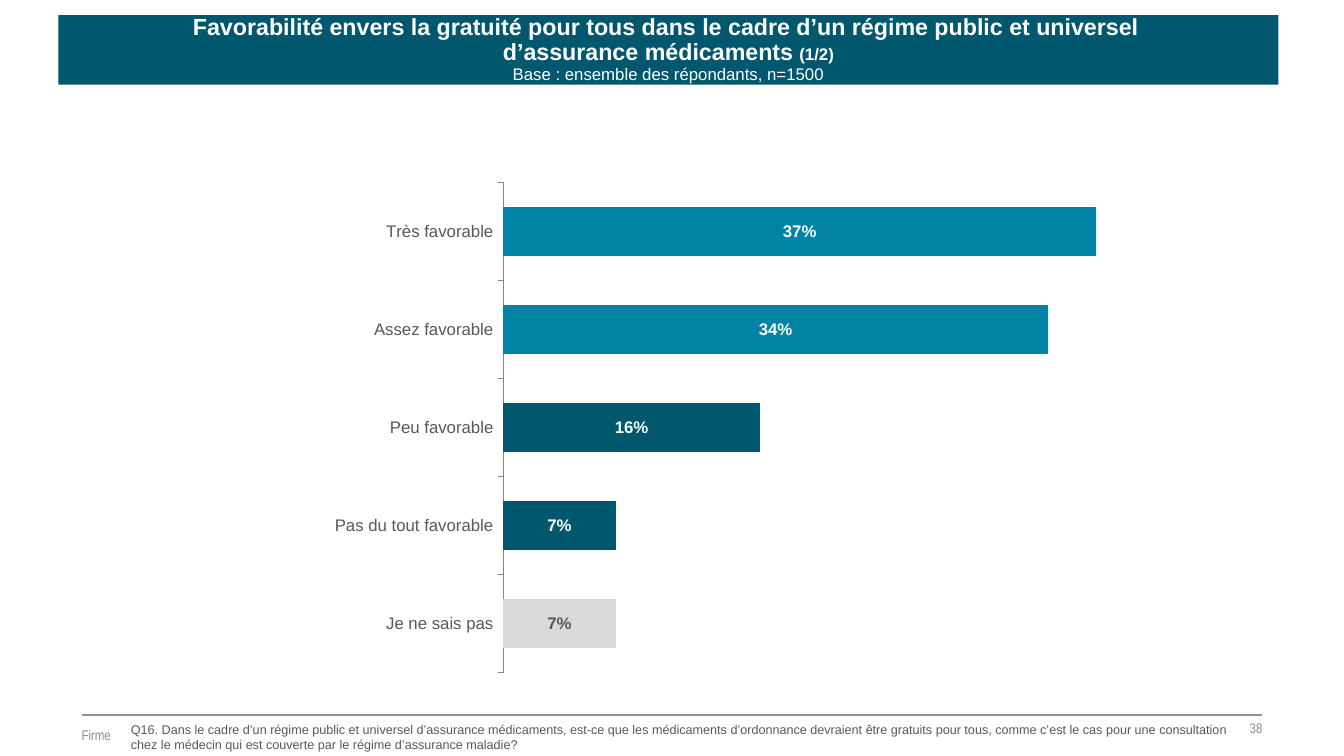
from lxml import etree
from pptx import Presentation
from pptx.chart.data import CategoryChartData
from pptx.dml.color import RGBColor
from pptx.enum.chart import XL_CHART_TYPE, XL_LABEL_POSITION, XL_TICK_LABEL_POSITION, XL_TICK_MARK
from pptx.enum.shapes import MSO_CONNECTOR, MSO_SHAPE
from pptx.enum.text import MSO_ANCHOR, PP_ALIGN
from pptx.oxml import parse_xml
from pptx.oxml.ns import nsdecls, qn
from pptx.util import Inches, Pt

COLORS = {
    "dark_teal": "00576E",
    "teal": "0083A5",
    "light_gray": "D9D9D9",
    "text_gray": "595959",
    "footer_gray": "8C8C8C",
    "axis_gray": "868686",
    "rule": "88959E",
    "white": "FFFFFF",
}

ANSWERS = [
    ("Très favorable", 0.37, "teal"),
    ("Assez favorable", 0.34, "teal"),
    ("Peu favorable", 0.16, "dark_teal"),
    ("Pas du tout favorable", 0.07, "dark_teal"),
    ("Je ne sais pas", 0.07, "light_gray"),
]

QUESTION = (
    "Q16. Dans le cadre d’un régime public et universel d’assurance médicaments, "
    "est-ce que les médicaments d’ordonnance devraient être gratuits pour tous, "
    "comme c’est le cas pour une consultation chez le médecin qui est couverte "
    "par le régime d’assurance maladie?"
)


def color(name):
    """Return the named colour."""
    return RGBColor.from_string(COLORS[name])


def style_font(font, size, color_name, bold=False, family="Arial"):
    """Apply family, size, weight and colour to a font."""
    font.name, font.size, font.bold = family, Pt(size), bold
    font.color.rgb = color(color_name)


def add_run(paragraph, text, size, color_name, bold=False, family="Arial"):
    """Append one styled run to a paragraph."""
    run = paragraph.add_run()
    run.text = text
    style_font(run.font, size, color_name, bold, family)


def clear_margins(frame):
    """Remove the insets and centre the text vertically."""
    frame.margin_left = frame.margin_right = frame.margin_top = frame.margin_bottom = 0
    frame.vertical_anchor = MSO_ANCHOR.MIDDLE


def add_text_box(slide, box):
    """Add a wrapping text box and return its text frame."""
    frame = slide.shapes.add_textbox(*map(Inches, box)).text_frame
    frame.word_wrap = True
    return frame


def add_footer_text(slide, box, text, alignment):
    """Add one small footer label."""
    frame = add_text_box(slide, box)
    clear_margins(frame)
    frame.paragraphs[0].alignment = alignment
    add_run(frame.paragraphs[0], text, 10, "footer_gray", family="Arial Narrow")


def add_rule(slide, left, right, top):
    """Draw the horizontal footer rule."""
    rule = slide.shapes.add_connector(
        MSO_CONNECTOR.STRAIGHT, Inches(left), Inches(top), Inches(right), Inches(top)
    )
    rule.line.color.rgb = color("rule")
    rule.line.width = Pt(1.5)
    etree.SubElement(rule._element.spPr, qn("a:effectLst"))


def add_title_banner(slide):
    """Add the banner with the title and the base line."""
    banner = slide.shapes.add_shape(
        MSO_SHAPE.RECTANGLE, Inches(0.58), Inches(0.15), Inches(12.1), Inches(0.69)
    )
    banner.shadow.inherit = False
    banner.fill.solid()
    banner.fill.fore_color.rgb = color("dark_teal")
    banner.line.fill.background()
    clear_margins(banner.text_frame)
    paragraph = banner.text_frame.paragraphs[0]
    paragraph.alignment = PP_ALIGN.CENTER
    paragraph.line_spacing = 0.9
    title = "Favorabilité envers la gratuité pour tous dans le cadre d’un régime public et universel "
    add_run(paragraph, title, 16.6, "white", True)
    paragraph.add_line_break()
    add_run(paragraph, "d’assurance médicaments ", 16.6, "white", True)
    add_run(paragraph, "(1/2)", 12, "white", True)
    paragraph.add_line_break()
    add_run(paragraph, "Base : ensemble des répondants, n=1500", 12, "white")


def set_plot_layout(chart, left, top, width, height):
    """Fix the inner plot area as fractions of the chart."""
    plot_area = chart._chartSpace.chart.plotArea
    for layout in plot_area.findall(qn("c:layout")):
        plot_area.remove(layout)
    places = "".join(
        f'<c:{tag} val="{value}"/>'
        for tag, value in (("x", left), ("y", top), ("w", width), ("h", height))
    )
    plot_area.insert(0, parse_xml(
        f'<c:layout {nsdecls("c")}><c:manualLayout><c:layoutTarget val="inner"/>'
        f'<c:xMode val="edge"/><c:yMode val="edge"/>{places}</c:manualLayout></c:layout>'
    ))


def style_axes(chart):
    """Show the answers from top to bottom and hide the value axis."""
    answers = chart.category_axis
    answers.reverse_order = True
    answers.has_major_gridlines = False
    answers.major_tick_mark = XL_TICK_MARK.OUTSIDE
    answers.tick_label_position = XL_TICK_LABEL_POSITION.NEXT_TO_AXIS
    answers.format.line.color.rgb = color("axis_gray")
    style_font(answers.tick_labels.font, 12, "text_gray")
    shares = chart.value_axis
    shares.visible = False
    shares.has_major_gridlines = False
    shares.minimum_scale, shares.maximum_scale = 0, 0.4


def add_answer_chart(slide):
    """Add the bar chart of answers."""
    data = CategoryChartData(number_format="0%")
    data.categories = [label for label, _, _ in ANSWERS]
    data.add_series("Series 1", [share for _, share, _ in ANSWERS])
    chart = slide.shapes.add_chart(
        XL_CHART_TYPE.BAR_CLUSTERED,
        Inches(0.97), Inches(1.66), Inches(11.53), Inches(5.36), data,
    ).chart
    chart.has_legend = chart.has_title = False
    chart.font.name, chart.font.size = "Calibri", Pt(18)
    set_plot_layout(chart, 0.349, 0.028, 0.551, 0.908)
    style_axes(chart)
    plot = chart.plots[0]
    plot.gap_width = 100
    plot.vary_by_categories = False
    series = plot.series[0]
    series.format.fill.solid()
    series.format.fill.fore_color.rgb = color("dark_teal")
    labels = series.data_labels
    labels.show_value = True
    labels.number_format, labels.number_format_is_linked = "0%", False
    labels.position = XL_LABEL_POSITION.CENTER
    style_font(labels.font, 12, "white", True)
    for index, (_, _, bar_color) in enumerate(ANSWERS):
        fill = series.points[index].format.fill
        fill.solid()
        fill.fore_color.rgb = color(bar_color)
    unsure_label = series.points[len(ANSWERS) - 1].data_label
    style_font(unsure_label.font, 12, "text_gray", True)
    unsure_label.position = XL_LABEL_POSITION.CENTER


def main():
    """Build and save the presentation."""
    presentation = Presentation()
    presentation.slide_width, presentation.slide_height = Inches(13.33), Inches(7.5)
    slide = presentation.slides.add_slide(presentation.slide_layouts[6])
    add_rule(slide, 0.81, 12.52, 7.09)
    add_footer_text(slide, (8.73, 7.09, 3.79, 0.26), "38", PP_ALIGN.RIGHT)
    add_footer_text(slide, (0.81, 7.16, 3.73, 0.26), "Firme", PP_ALIGN.LEFT)
    question = add_text_box(slide, (1.2, 7.11, 11.3, 0.39))
    add_run(question.paragraphs[0], QUESTION, 9, "text_gray")
    add_answer_chart(slide)
    add_title_banner(slide)
    presentation.save("out.pptx")


if __name__ == "__main__":
    main()
